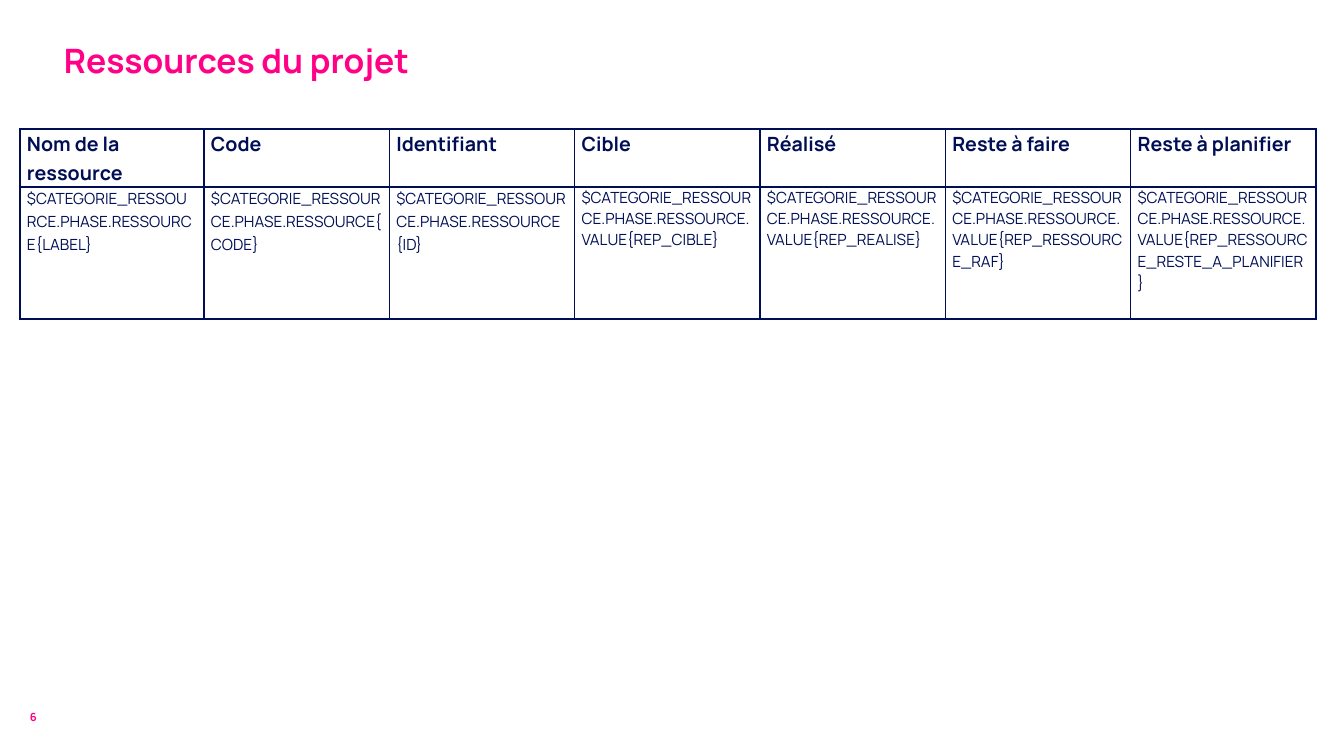
from lxml import etree
from pptx import Presentation
from pptx import util as u
from pptx.dml.color import RGBColor
from pptx.enum import text
from pptx.oxml import ns

EMU_PER_PX = 914400 / 100.8
FONT = "Manrope"
PINK = RGBColor(0xFF, 0x00, 0x87)
NAVY = RGBColor(0x00, 0x0F, 0x55)

TITLE = {"size": u.Pt(24), "bold": True}
NUMBER = {"size": u.Pt(8), "bold": True}
HEADING = {"size": u.Pt(14), "bold": True}
FIELD = {"size": u.Pt(11), "bold": False}
SPACED = {"line_spacing": 1.07, "space_after": u.Pt(8)}
SINGLE = {}

TABLE_WIDTH = 1296
FIRST_WIDTH = 184
ROW_HEIGHTS = (58, 132)
PREFIX = "$CATEGORIE_RESSOURCE.PHASE.RESSOURCE"
COLUMNS = [
    ("Nom de la ressource", "{LABEL}", SPACED),
    ("Code", "{CODE}", SPACED),
    ("Identifiant", "{ID}", SPACED),
    ("Cible", ".VALUE{REP_CIBLE}", SINGLE),
    ("Réalisé", ".VALUE{REP_REALISE}", SINGLE),
    ("Reste à faire", ".VALUE{REP_RESSOURCE_RAF}", SINGLE),
    ("Reste à planifier", ".VALUE{REP_RESSOURCE_RESTE_A_PLANIFIER}", SINGLE),
]


def px(length):
    return u.Emu(round(length * EMU_PER_PX))


def set_all(target, values):
    for name, value in values.items():
        setattr(target, name, value)


def write(frame, words, color, font, spacing):
    frame.word_wrap = True
    para = frame.paragraphs[0]
    set_all(para, spacing)
    span = para.add_run()
    span.text = words
    set_all(span.font, {"name": FONT, **font})
    span.font.color.rgb = color


def add_label(page, area, words, font, anchor):
    box = page.shapes.add_textbox(*map(px, area))
    box.text_frame.vertical_anchor = anchor
    write(box.text_frame, words, PINK, font, SINGLE)


def add_borders(cell):
    props = cell._tc.get_or_add_tcPr()
    for side in ("a:lnL", "a:lnR", "a:lnT", "a:lnB"):
        line = etree.SubElement(props, ns.qn(side), w=str(u.Pt(1)))
        fill = etree.SubElement(line, ns.qn("a:solidFill"))
        etree.SubElement(fill, ns.qn("a:srgbClr"), val=str(NAVY))


def fill_cell(cell, words, font, spacing):
    set_all(cell, {"margin_left": px(7), "margin_right": px(8),
                   "margin_top": 0, "margin_bottom": 0})
    write(cell.text_frame, words, NAVY, font, spacing)
    add_borders(cell)
    cell.fill.background()


def add_resources(page):
    area = (20, 129, TABLE_WIDTH, sum(ROW_HEIGHTS))
    frame = page.shapes.add_table(len(ROW_HEIGHTS), len(COLUMNS), *map(px, area))
    table = frame.table
    set_all(table, {"first_row": False, "horz_banding": False})
    for row, height in zip(table.rows, ROW_HEIGHTS):
        row.height = px(height)
    other_width = (TABLE_WIDTH - FIRST_WIDTH) / (len(COLUMNS) - 1)
    for index, (heading, field, spacing) in enumerate(COLUMNS):
        table.columns[index].width = px(other_width if index else FIRST_WIDTH)
        fill_cell(table.cell(0, index), heading, HEADING, SPACED)
        fill_cell(table.cell(1, index), PREFIX + field, FIELD, spacing)


def main():
    deck = Presentation()
    set_all(deck, {"slide_width": px(1344), "slide_height": px(756)})
    page = deck.slides.add_slide(deck.slide_layouts[6])
    add_label(page, (20, 703, 59, 28), "6", NUMBER, text.MSO_ANCHOR.MIDDLE)
    add_label(page, (54, 30, 1212, 55), "Ressources du projet", TITLE, text.MSO_ANCHOR.BOTTOM)
    add_resources(page)
    deck.save("out.pptx")


if __name__ == "__main__":
    main()
